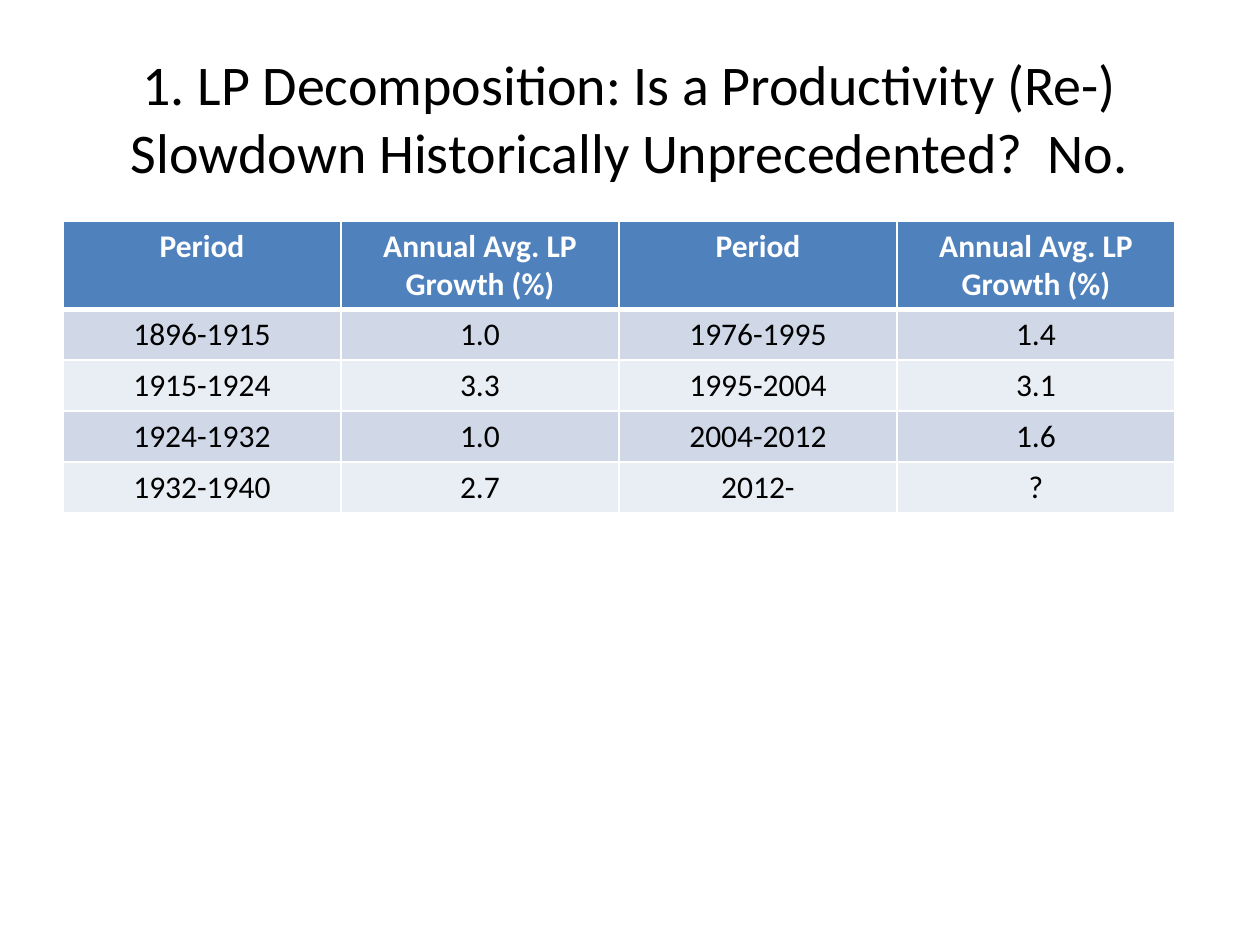
from dataclasses import dataclass

from lxml.etree import SubElement
from pptx import Presentation
from pptx.dml.color import RGBColor as Color
from pptx.enum.text import MSO_ANCHOR as Anchor, PP_ALIGN as Align
from pptx.oxml.ns import qn
from pptx.util import Emu, Pt

PX_PER_INCH = 126
TITLE = "1. LP Decomposition: Is a Productivity (Re-) Slowdown Historically Unprecedented?  No."
HEADERS = ["Period", "Annual Avg. LP Growth (%)"] * 2
GROWTH_ROWS = [
    ["1896-1915", "1.0", "1976-1995", "1.4"],
    ["1915-1924", "3.3", "1995-2004", "3.1"],
    ["1924-1932", "1.0", "2004-2012", "1.6"],
    ["1932-1940", "2.7", "2012-", "?"],
]


@dataclass(frozen=True)
class Theme:
    font: str = "Calibri"
    title_size: int = 32
    table_size: int = 18
    text: str = "000000"
    header_text: str = "FFFFFF"
    header_fill: str = "4F81BD"
    bands: tuple = ("D0D8E8", "E9EDF4")
    border: str = "FFFFFF"
    border_width: int = 1
    header_rule: int = 3


THEME = Theme()


def px(length):
    return Emu(round(length * 914400 / PX_PER_INCH))


def apply_format(target, values):
    for name, value in values.items():
        setattr(target, name, value)


def write_text(frame, text, size, color, bold=False):
    paragraph = frame.paragraphs[0]
    paragraph.alignment = Align.CENTER
    run = paragraph.add_run()
    run.text = text
    apply_format(run.font, {"name": THEME.font, "size": Pt(size), "bold": bold})
    run.font.color.rgb = Color.from_string(color)


def add_title(slide, text, left, top, width, height):
    shape = slide.shapes.add_textbox(px(left), px(top), px(width), px(height))
    apply_format(shape.text_frame, {"word_wrap": True, "vertical_anchor": Anchor.MIDDLE})
    write_text(shape.text_frame, text, THEME.title_size, THEME.text)


def set_borders(cell, top, bottom):
    properties = cell._tc.get_or_add_tcPr()
    widths = {"L": THEME.border_width, "R": THEME.border_width, "T": top, "B": bottom}
    for side, width in widths.items():
        line = SubElement(properties, qn(f"a:ln{side}"), w=str(Pt(width)))
        fill = SubElement(line, qn("a:solidFill"))
        SubElement(fill, qn("a:srgbClr"), val=THEME.border)


def style_cell(cell, text, row):
    is_header = row == 0
    top = THEME.header_rule if row == 1 else THEME.border_width
    bottom = THEME.header_rule if is_header else THEME.border_width
    set_borders(cell, top, bottom)
    cell.fill.solid()
    fill = THEME.header_fill if is_header else THEME.bands[(row - 1) % 2]
    cell.fill.fore_color.rgb = Color.from_string(fill)
    color = THEME.header_text if is_header else THEME.text
    write_text(cell.text_frame, text, THEME.table_size, color, is_header)


def add_growth_table(slide, rows, left, top, column_width, header_height, row_height):
    heights = [header_height] + [row_height] * (len(rows) - 1)
    columns = len(rows[0])
    table = slide.shapes.add_table(
        len(rows), columns, px(left), px(top), px(column_width * columns), px(sum(heights))
    ).table
    table.horz_banding = False
    for column in table.columns:
        column.width = px(column_width)
    for row, (values, height) in enumerate(zip(rows, heights)):
        table.rows[row].height = px(height)
        for column, text in enumerate(values):
            style_cell(table.cell(row, column), text, row)


def main():
    presentation = Presentation()
    size = {"slide_width": px(1260), "slide_height": px(945)}
    apply_format(presentation, size)
    slide = presentation.slides.add_slide(presentation.slide_layouts[6])
    add_title(slide, TITLE, left=63, top=38, width=1134, height=158)
    add_growth_table(
        slide, [HEADERS, *GROWTH_ROWS],
        left=63, top=221, column_width=278, header_height=88, row_height=51,
    )
    presentation.save("out.pptx")


if __name__ == "__main__":
    main()
